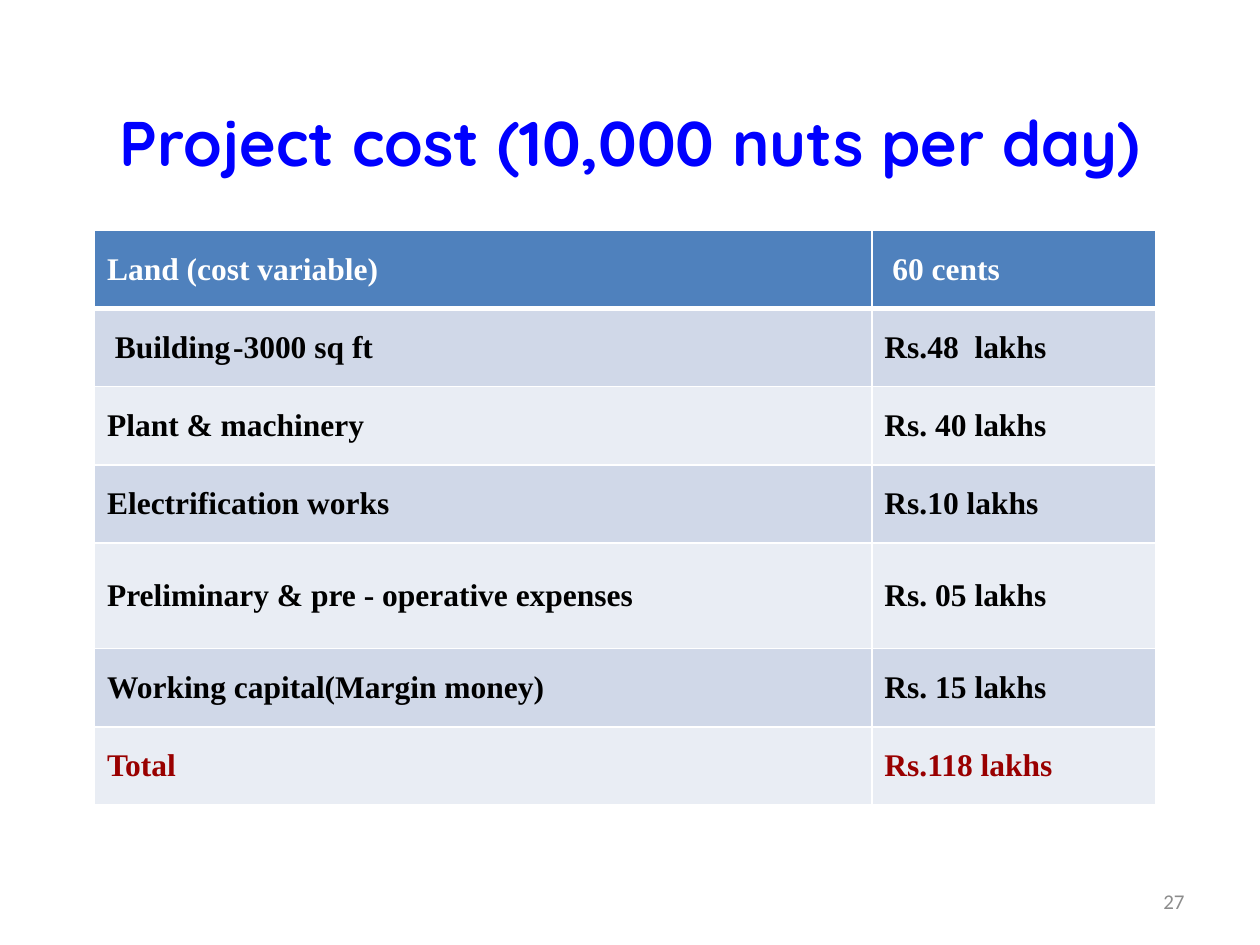
import dataclasses

import pptx
import pptx.dml.color
import pptx.enum.text
import pptx.oxml
import pptx.oxml.ns
import pptx.util

Inches = pptx.util.Inches
Pt = pptx.util.Pt
ALIGN = pptx.enum.text.PP_ALIGN
MIDDLE = pptx.enum.text.MSO_ANCHOR.MIDDLE


@dataclasses.dataclass(frozen=True)
class Theme:
    title: str = "0000FF"
    head: str = "4F81BD"
    bands: tuple = ("E9EDF4", "D0D8E8")
    light: str = "FFFFFF"
    dark: str = "000000"
    total: str = "990000"
    muted: str = "8C8C8C"
    title_font: str = "Quicksand"
    table_font: str = "Times New Roman"
    page_font: str = "Calibri"
    title_size: int = 36
    table_size: int = 18
    page_size: int = 12
    rule: int = 1
    head_rule: int = 3


THEME = Theme()
WIDTH, HEIGHT = 10, 7.5

COSTS = [
    ("Land (cost variable)", " 60 cents"),
    (" Building\t-3000 sq ft", "Rs.48  lakhs"),
    ("Plant & machinery", "Rs. 40 lakhs"),
    ("Electrification works", "Rs.10 lakhs"),
    ("Preliminary & pre - operative expenses", "Rs. 05 lakhs"),
    ("Working capital(Margin money)", "Rs. 15 lakhs"),
    ("Total", "Rs.118 lakhs"),
]
COLS = (6.17, 2.25)
ROW, TALL_ROW = 0.62, 0.84
TALL = 4  # index of the expenses row


def color(code):
    return pptx.dml.color.RGBColor.from_string(code)


def style(para, face, size, code, bold=False):
    font = para.font
    font.name, font.size, font.bold = face, Pt(size), bold
    font.color.rgb = color(code)


def add_text(slide, box, text, align, *look):
    """Place one line of text, centred vertically in its box."""
    frame = slide.shapes.add_textbox(*map(Inches, box)).text_frame
    frame.word_wrap = True
    frame.vertical_anchor = MIDDLE
    para = frame.paragraphs[0]
    para.text, para.alignment = text, align
    style(para, *look)


def add_edges(cell, base):
    """Draw white rules round a cell; the base rule has its own width."""
    props = cell._tc.get_or_add_tcPr()
    widths = {"L": THEME.rule, "R": THEME.rule, "T": THEME.rule, "B": base}
    for spot, (side, width) in enumerate(widths.items()):
        props.insert(spot, pptx.oxml.parse_xml(
            f'<a:ln{side} {pptx.oxml.ns.nsdecls("a")} w="{Pt(width)}">'
            f'<a:solidFill><a:srgbClr val="{THEME.light}"/></a:solidFill>'
            f'</a:ln{side}>'))


def add_costs(slide, box):
    """Build the cost table with a header, banded rows and a total."""
    last = len(COSTS) - 1
    table = slide.shapes.add_table(
        len(COSTS), len(COLS), *map(Inches, box)).table
    for col, width in zip(table.columns, COLS):
        col.width = Inches(width)

    for i, items in enumerate(COSTS):
        table.rows[i].height = Inches(TALL_ROW if i == TALL else ROW)
        fill = THEME.bands[i % 2] if i else THEME.head
        ink = {0: THEME.light, last: THEME.total}.get(i, THEME.dark)
        # The rule under the header is shared with the row below it
        base = THEME.rule if i else THEME.head_rule
        for j, text in enumerate(items):
            cell = table.cell(i, j)
            cell.fill.solid()
            cell.fill.fore_color.rgb = color(fill)
            cell.vertical_anchor = MIDDLE
            para = cell.text_frame.paragraphs[0]
            para.text = text
            style(para, THEME.table_font, THEME.table_size, ink, True)
            add_edges(cell, base)
            if i == 1:
                edge = cell._tc.tcPr.find(pptx.oxml.ns.qn("a:lnT"))
                edge.set("w", str(Pt(THEME.head_rule)))


def main():
    deck = pptx.Presentation()
    deck.slide_width, deck.slide_height = Inches(WIDTH), Inches(HEIGHT)
    slide = deck.slides.add_slide(deck.slide_layouts[6])

    # Title
    add_text(slide, (0.05 * WIDTH, 0.5, 0.9 * WIDTH, 1.25),
             "Project cost (10,000 nuts per day)", ALIGN.CENTER,
             THEME.title_font, THEME.title_size, THEME.title, True)
    # Page number
    add_text(slide, (7.17, 6.95, 2.33, 0.4), "27", ALIGN.RIGHT,
             THEME.page_font, THEME.page_size, THEME.muted)
    # Cost table
    tall = ROW * (len(COSTS) - 1) + TALL_ROW
    add_costs(slide, (0.75, 1.83, sum(COLS), tall))

    deck.save("out.pptx")


if __name__ == "__main__":
    main()
